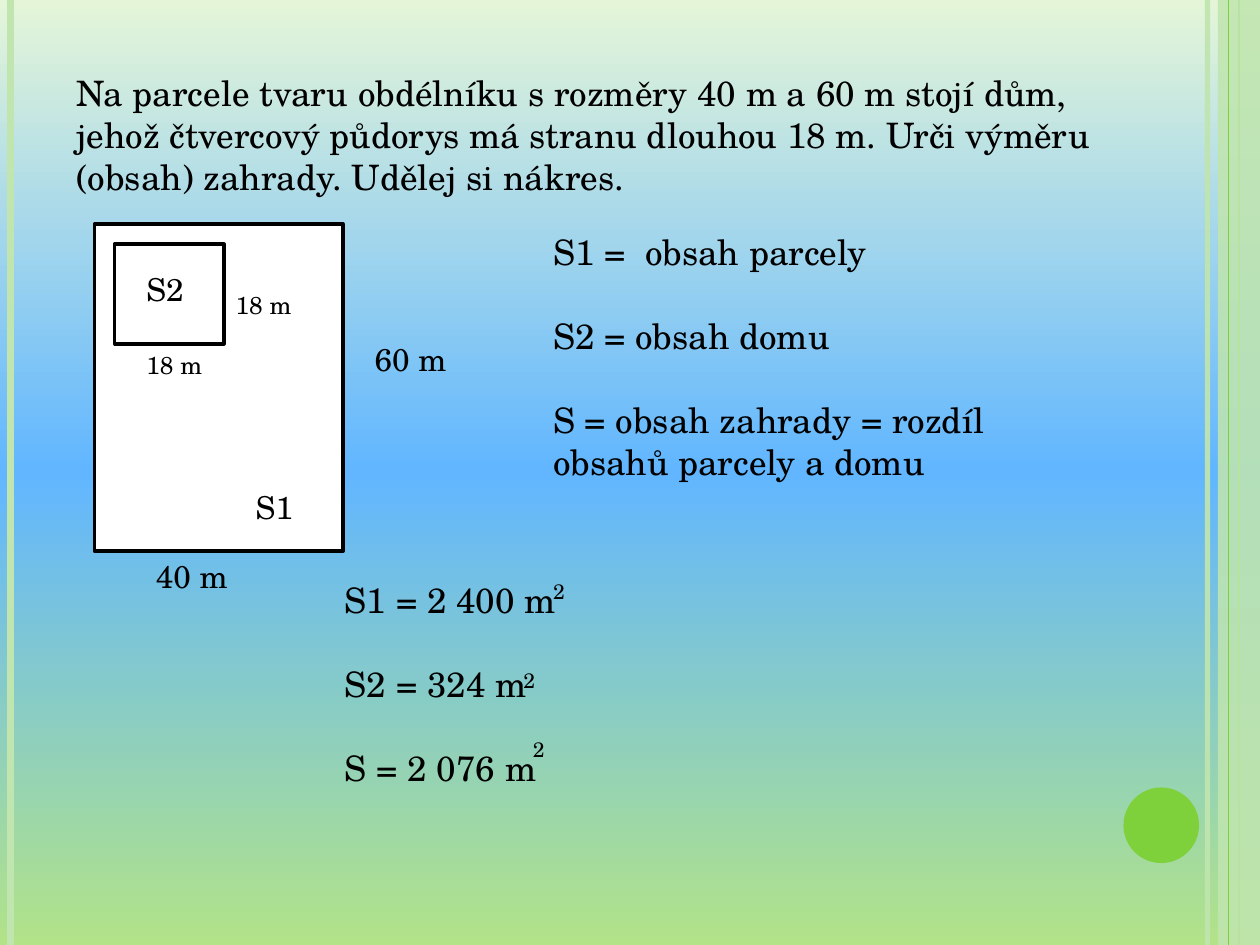
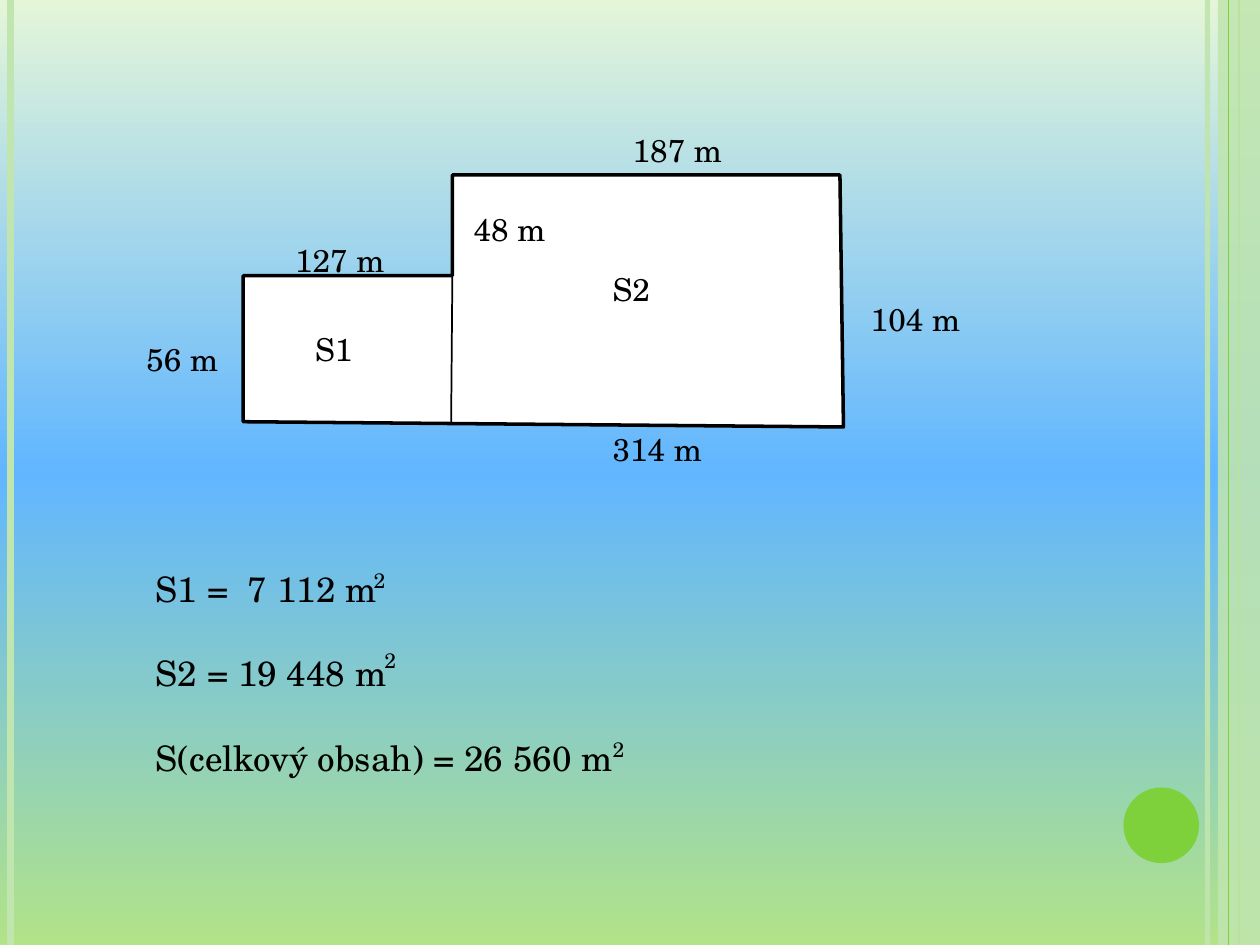
from copy import deepcopy

from pptx import Presentation
from pptx import util as u
from pptx.dml.color import RGBColor
from pptx.enum import shapes, text
from pptx.oxml import ns, xmlchemy

Pt = u.Pt
W, H = 720, 540
FONT = "TeX Gyre Schola"
BLACK, WHITE, GREEN, PALE = "000000", "FFFFFF", "7FD13B", "C0E5AF"
BACKGROUND = [(0, "E5F6D8"), (0.5, "61B6FF"), (1, "B2E389")]
BODY, LABEL, SMALL, POWER = 20, 18, 14, 12


def rgb(value):
    return RGBColor.from_string(value)


def set_alpha(fill_parent, percent):
    color = fill_parent.find(".//" + ns.qn("a:srgbClr"))
    alpha = xmlchemy.OxmlElement("a:alpha")
    alpha.set("val", str(percent * 1000))
    color.append(alpha)


def paint(sp, fill, line=None, width=2):
    sp.shadow.inherit = False
    sp.fill.solid()
    sp.fill.fore_color.rgb = rgb(fill)
    if line:
        sp.line.color.rgb = rgb(line)
        sp.line.width = Pt(width)
    else:
        sp.line.fill.background()
    return sp


def add_box(s, x, y, w, h, fill, line=None, kind=shapes.MSO_SHAPE.RECTANGLE):
    sp = s.shapes.add_shape(kind, Pt(x), Pt(y), Pt(w), Pt(h))
    return paint(sp, fill, line)


def add_line(s, x1, y1, x2, y2, color, width):
    cn = s.shapes.add_connector(shapes.MSO_CONNECTOR.STRAIGHT,
                                Pt(x1), Pt(y1), Pt(x2), Pt(y2))
    cn.line.color.rgb = rgb(color)
    cn.line.width = Pt(width)
    cn._element.spPr.append(xmlchemy.OxmlElement("a:effectLst"))
    return cn


def add_text(s, x, y, w, paragraphs, size=LABEL, rows=1, gap=0):
    """Text box whose height follows from its number of rows."""
    sp = s.shapes.add_textbox(Pt(x), Pt(y), Pt(w), Pt(rows * size * 1.2 + 7.2))
    tf = sp.text_frame
    tf.word_wrap = True
    tf.auto_size = text.MSO_AUTO_SIZE.SHAPE_TO_FIT_TEXT
    for i, words in enumerate(paragraphs):
        p = tf.paragraphs[0] if i == 0 else tf.add_paragraph()
        if i:
            p.space_before = Pt(gap)
        r = p.add_run()
        r.text = words
        for name, value in {"size": Pt(size), "name": FONT}.items():
            setattr(r.font, name, value)
        r.font.color.rgb = rgb(BLACK)
    return sp


def add_labels(s, x, y, labels):
    """Labels as (dx, dy, width, words, size), measured from x, y."""
    for dx, dy, w, words, size in labels:
        add_text(s, x + dx, y + dy, w, [words], size)


def set_background(master):
    fill = master.background.fill
    fill.gradient()
    fill.gradient_angle = 270
    stops = master.element.find(".//" + ns.qn("a:gsLst"))
    stops.append(deepcopy(stops[0]))
    for stop, (position, color) in zip(fill.gradient_stops, BACKGROUND):
        stop.position = position
        stop.color.rgb = rgb(color)


def add_frame(s):
    """Stripes on both edges and the green dot."""
    stripe = add_line(s, 690, 0, 690, H, PALE, 3)
    set_alpha(stripe._element.spPr, 93)
    add_line(s, 6, 0, 6, H, PALE, 4.5)
    add_line(s, 708, 0, 708, H, GREEN, 1.5)
    band = add_box(s, 696, 0, W - 696, H, PALE)
    set_alpha(band._element.spPr, 87)
    add_line(s, 702, 0, 702, H, GREEN, 0.75)
    add_box(s, 642, 450, 43.2, 43.2, GREEN, kind=shapes.MSO_SHAPE.OVAL)


def add_results(s, x, y, w, results, powers):
    """Spaced results with a raised 2 at each offset in powers."""
    add_text(s, x, y, w, results, BODY, rows=5, gap=24)
    add_labels(s, x, y, [(dx, dy, 28, "2", POWER) for dx, dy in powers])


def add_plot(s, x, y, w, h):
    """Plot with the square house in its upper left corner."""
    add_box(s, x, y, w, h, WHITE, BLACK)
    add_box(s, x + 11.5, y + 11.5, 62.5, 57, WHITE, BLACK)
    add_labels(s, x, y, [
        (w + 11, 62.5, 73.5, "60 m", LABEL),
        (28, h, 91, "40 m", LABEL),
        (85, 147.5, 45.5, "S1", LABEL),
        (73.5, 34, 57, "18 m", SMALL),
        (22.5, 68.5, 57, "18 m", SMALL),
        (22.5, 23, 39.5, "S2", LABEL),
    ])


def add_joined_plots(s, x, y, w, h):
    """Outline of two adjoining plots, with a thin line between them."""
    step_x, step_y = 119.5, 57.5
    corners = [(step_x, step_y), (step_x, 0), (w - 2, 0), (w, h), (0, h - 3)]
    ff = s.shapes.build_freeform(Pt(x), Pt(y + step_y), scale=1.0)
    ff.add_line_segments([(Pt(x + dx), Pt(y + dy)) for dx, dy in corners], close=True)
    paint(ff.convert_to_shape(), WHITE, BLACK)
    add_line(s, x + step_x, y + step_y, x + step_x - 0.7, y + h - 2, BLACK, 1)
    add_labels(s, x, y, [
        (124.5, 16.5, 62.5, "48 m", LABEL),
        (215.5, -28.8, 91, "187 m", LABEL),
        (22.5, 34, 85, "127 m", LABEL),
        (-62.5, 91, 68, "56 m", LABEL),
        (w + 8.5, 68, 108, "104 m", LABEL),
        (204, h - 2, 113, "314 m", LABEL),
        (204, 51, 68, "S2", LABEL),
        (34, 85, 62.5, "S1", LABEL),
    ])


def garden_slide(s):
    add_text(s, 36.5, 37.5, 629.5, [
        "Na parcele tvaru obdélníku s rozměry 40 m a 60 m stojí dům, jehož čtvercový "
        "půdorys má stranu dlouhou 18 m. Urči výměru (obsah) zahrady. Udělej si nákres.",
    ], BODY, rows=3)
    add_plot(s, 54, 128, 142, 187)
    add_text(s, 309, 128, 300, [
        "S1 =  obsah parcely",
        "S2 = obsah domu",
        "S = obsah zahrady = rozdíl obsahů parcely a domu",
    ], BODY, rows=6, gap=24)
    add_results(s, 190, 327, 283.5,
                ["S1 = 2 400 m", "S2 = 324 m", "S = 2 076 m"],
                [(119, 0), (102, 51), (107.5, 90.5)])


def joined_plots_slide(s):
    add_joined_plots(s, 139, 100, 343, 144)
    add_results(s, 82, 321, 521,
                ["S1 =  7 112 m", "S2 = 19 448 m", "S(celkový obsah) = 26 560 m"],
                [(124.5, 0), (130.5, 45.5), (261, 96.5)])


def main():
    prs = Presentation()
    prs.slide_width, prs.slide_height = Pt(W), Pt(H)
    set_background(prs.slide_master)
    for build in (garden_slide, joined_plots_slide):
        s = prs.slides.add_slide(prs.slide_layouts[6])
        add_frame(s)
        build(s)
    prs.save("out.pptx")


if __name__ == "__main__":
    main()
